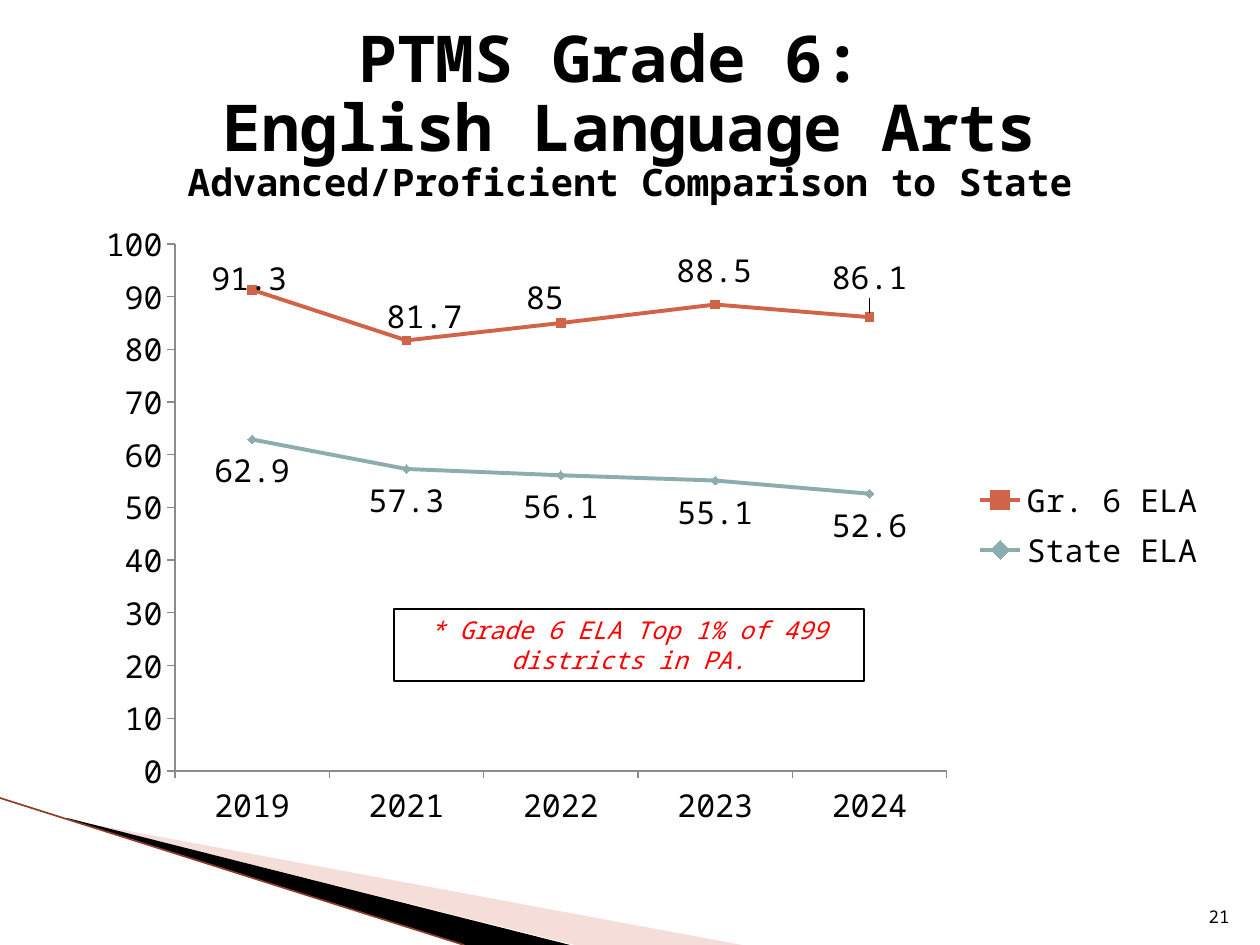
import pptx
import pptx.chart.data
import pptx.dml.color
import pptx.enum.chart
import pptx.enum.shapes
import pptx.enum.text
import pptx.oxml
import pptx.oxml.ns
import pptx.util
from dataclasses import dataclass
from lxml import etree

PX = 914400 / 126
ALIGN = pptx.enum.text.PP_ALIGN
ANCHOR = pptx.enum.text.MSO_ANCHOR
CHART = pptx.enum.chart


@dataclass(frozen=True)
class Theme:
    font: str = "Noto Sans Mono"
    ink: str = "000000"
    note: str = "FF0000"
    blush: str = "E7ACA4"
    edge: str = "8F3A2B"
    axis: str = "8B8B8B"
    school: str = "D16349"
    state: str = "8CADAE"
    title_size: float = 36.9
    subtitle_size: float = 21.6
    chart_size: int = 18
    note_size: int = 14
    number_size: int = 10


THEME = Theme()
CHART_BOX = (84, 210, 1134, 630)
PLOT_BOX = (175, 244, 772, 527)
YEARS = ["2019", "2021", "2022", "2023", "2024"]
SCHOOL_SCORES = [91.3, 81.7, 85, 88.5, 86.1]
STATE_SCORES = [62.9, 57.3, 56.1, 55.1, 52.6]
SCHOOL_LABEL_SHIFTS = [(-3, 19), (18, 7), (-16, 5), (-1, -4), (0, -9)]


def px(*lengths):
    return [pptx.util.Emu(round(length * PX)) for length in lengths]


def rgb(color):
    return pptx.dml.color.RGBColor.from_string(color)


def style_font(font, size, color=THEME.ink, bold=False, italic=False):
    font.name = THEME.font
    font.size = pptx.util.Pt(size)
    font.color.rgb = rgb(color)
    font.bold = bold
    font.italic = italic


def add_wedge(page, points, color, opacity=100):
    builder = page.shapes.build_freeform(*points[0], scale=PX)
    builder.add_line_segments(points[1:], close=True)
    wedge = builder.convert_to_shape()
    wedge.shadow.inherit = False
    wedge.line.fill.background()
    wedge.fill.solid()
    wedge.fill.fore_color.rgb = rgb(color)
    if opacity < 100:
        swatch = wedge.fill._xPr.find(".//" + pptx.oxml.ns.qn("a:srgbClr"))
        alpha = etree.SubElement(swatch, pptx.oxml.ns.qn("a:alpha"))
        alpha.set("val", str(opacity * 1000))


def add_edge(page, start, end):
    edge = page.shapes.add_connector(
        pptx.enum.shapes.MSO_CONNECTOR.STRAIGHT, *px(*start, *end))
    edge.line.color.rgb = rgb(THEME.edge)
    edge.line.width = pptx.util.Pt(0.95)
    etree.SubElement(edge._element.spPr, pptx.oxml.ns.qn("a:effectLst"))


def write_title(page, lines, subtitle):
    title = page.shapes.title
    title.left, title.top, title.width, title.height = px(63, 38, 1134, 157)
    frame = title.text_frame
    frame.auto_size = pptx.enum.text.MSO_AUTO_SIZE.NONE
    frame.vertical_anchor = ANCHOR.MIDDLE
    para = frame.paragraphs[0]
    para.alignment = ALIGN.CENTER
    para.line_spacing = 0.88
    for line in lines:
        span = para.add_run()
        span.text = line
        style_font(span.font, THEME.title_size, bold=True)
        para.add_line_break()
    span = para.add_run()
    span.text = subtitle
    style_font(span.font, THEME.subtitle_size, bold=True)


def add_text(page, bounds, text, size, color, alignment, anchor,
             italic=False, outlined=False):
    box = page.shapes.add_textbox(*px(*bounds))
    if outlined:
        box.line.color.rgb = rgb(THEME.ink)
        box.line.width = pptx.util.Pt(1)
    frame = box.text_frame
    frame.word_wrap = True
    frame.vertical_anchor = anchor
    para = frame.paragraphs[0]
    para.text = text
    para.alignment = alignment
    style_font(para.font, size, color, italic=italic)


def manual_layout(**parts):
    fields = "".join(f'<c:{name} val="{value}"/>' for name, value in parts.items())
    return pptx.oxml.parse_xml(
        f'<c:layout {pptx.oxml.ns.nsdecls("c")}>'
        f"<c:manualLayout>{fields}</c:manualLayout></c:layout>")


def place_plot(chart):
    left, top, width, height = CHART_BOX
    plot_left, plot_top, plot_width, plot_height = PLOT_BOX
    area = chart._chartSpace.chart.plotArea
    for old in area.findall(pptx.oxml.ns.qn("c:layout")):
        area.remove(old)
    area.insert(0, manual_layout(
        layoutTarget="inner", xMode="edge", yMode="edge",
        x=round((plot_left - left) / width, 4), y=round((plot_top - top) / height, 4),
        w=round(plot_width / width, 4), h=round(plot_height / height, 4)))


def style_series(series, color, marker):
    series.smooth = False
    series.format.line.color.rgb = rgb(color)
    series.format.line.width = pptx.util.Pt(2.25)
    series.marker.style = marker
    series.marker.size = 5
    series.marker.format.fill.solid()
    series.marker.format.fill.fore_color.rgb = rgb(color)
    series.marker.format.line.color.rgb = rgb(color)
    labels = series.data_labels
    labels.show_value = True
    labels.position = CHART.XL_LABEL_POSITION.BELOW
    style_font(labels.font, THEME.chart_size)


def shift_labels(series, shifts):
    for index, (across, down) in enumerate(shifts):
        label = series.points[index].data_label
        style_font(label.font, THEME.chart_size)
        label.position = CHART.XL_LABEL_POSITION.ABOVE
        element = label._dLbl
        element.insert(1, manual_layout(
            x=round(across / CHART_BOX[2], 4), y=round(down / CHART_BOX[3], 4)))


def style_axis(axis):
    axis.has_major_gridlines = False
    axis.major_tick_mark = CHART.XL_TICK_MARK.OUTSIDE
    axis.minor_tick_mark = CHART.XL_TICK_MARK.NONE
    axis.format.line.color.rgb = rgb(THEME.axis)
    axis.format.line.width = pptx.util.Pt(0.75)


def add_score_chart(page):
    scores = pptx.chart.data.CategoryChartData()
    scores.categories = YEARS
    scores.add_series("Gr. 6 ELA", SCHOOL_SCORES)
    scores.add_series("State ELA", STATE_SCORES)
    chart = page.shapes.add_chart(
        CHART.XL_CHART_TYPE.LINE_MARKERS, *px(*CHART_BOX), scores).chart
    style_font(chart.font, THEME.chart_size)
    chart.has_title = False
    chart.has_legend = True
    chart.legend.position = CHART.XL_LEGEND_POSITION.RIGHT
    chart.legend.include_in_layout = False
    chart.plots[0].vary_by_categories = False
    for axis in (chart.category_axis, chart.value_axis):
        style_axis(axis)
    chart.value_axis.minimum_scale = 0
    chart.value_axis.maximum_scale = 100
    chart.value_axis.major_unit = 10
    place_plot(chart)
    school, state = chart.plots[0].series
    style_series(school, THEME.school, CHART.XL_MARKER_STYLE.SQUARE)
    style_series(state, THEME.state, CHART.XL_MARKER_STYLE.DIAMOND)
    shift_labels(school, SCHOOL_LABEL_SHIFTS)


def main():
    deck = pptx.Presentation()
    deck.slide_width, deck.slide_height = px(1260, 945)
    page = deck.slides.add_slide(deck.slide_layouts[5])
    add_wedge(page, [(69, 820), (742, 945), (575, 945), (69, 819)], THEME.blush, 40)
    add_wedge(page, [(67, 818), (570, 945), (465, 945), (68, 819)], THEME.ink)
    add_edge(page, (0, 798), (464, 945))
    write_title(page, ["PTMS Grade 6: ", "English Language Arts"],
                "Advanced/Proficient Comparison to State")
    add_score_chart(page)
    add_text(page, (1192, 883, 50, 50), "21", THEME.number_size, THEME.ink,
             ALIGN.RIGHT, ANCHOR.BOTTOM)
    add_text(page, (394, 609, 470, 72), "* Grade 6 ELA Top 1% of 499 districts in PA.",
             THEME.note_size, THEME.note, ALIGN.CENTER, ANCHOR.TOP,
             italic=True, outlined=True)
    deck.save("out.pptx")


if __name__ == "__main__":
    main()
